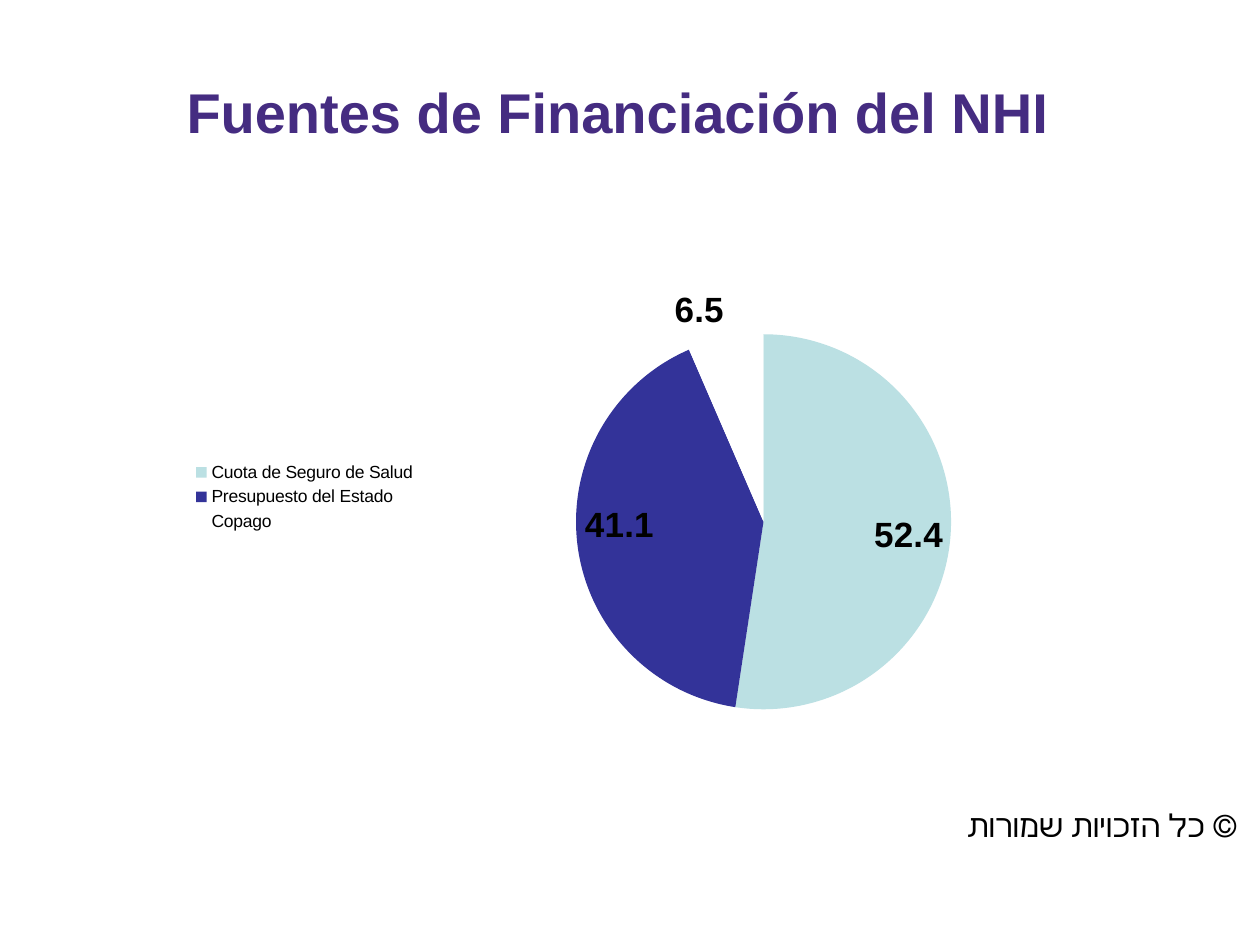
from lxml import etree
from pptx import Presentation
from pptx.chart.data import CategoryChartData
from pptx.dml.color import RGBColor
from pptx.enum.chart import XL_CHART_TYPE, XL_LABEL_POSITION, XL_LEGEND_POSITION
from pptx.enum.text import MSO_ANCHOR, PP_ALIGN
from pptx.oxml.ns import qn
from pptx.util import Emu, Pt

PX_PER_INCH = 126
FONT = "Arial"
PURPLE = RGBColor(0x45, 0x2C, 0x81)
BLACK = RGBColor(0x00, 0x00, 0x00)
PALE_TEAL = RGBColor(0xBB, 0xE0, 0xE3)
INDIGO = RGBColor(0x33, 0x33, 0x99)
WHITE = RGBColor(0xFF, 0xFF, 0xFF)
CENTER, RIGHT = PP_ALIGN.CENTER, PP_ALIGN.RIGHT
MIDDLE, TOP = MSO_ANCHOR.MIDDLE, MSO_ANCHOR.TOP
PIE = XL_CHART_TYPE.PIE
LEGEND_LEFT = XL_LEGEND_POSITION.LEFT
INSIDE_END, OUTSIDE_END = XL_LABEL_POSITION.INSIDE_END, XL_LABEL_POSITION.OUTSIDE_END

SOURCES = [
    ("Cuota de Seguro de Salud", 52.4, PALE_TEAL, INSIDE_END),
    ("Presupuesto del Estado", 41.1, INDIGO, INSIDE_END),
    ("Copago", 6.5, WHITE, OUTSIDE_END),
]


def px(length):
    """Turn whole pixels into EMU."""
    return Emu(round(length * 914400 / PX_PER_INCH))


def style_font(font, size, color, bold=False):
    """Set the face, size, colour and weight of a font."""
    font.name = FONT
    font.size = Pt(size)
    font.bold = bold
    font.color.rgb = color


def fill_text(shape, text, align, anchor, size, color, bold=False):
    """Write one right-to-left paragraph into a shape."""
    frame = shape.text_frame
    frame.text = text
    frame.word_wrap = True
    frame.vertical_anchor = anchor
    paragraph = frame.paragraphs[0]
    paragraph.alignment = align
    paragraph._p.get_or_add_pPr().set("rtl", "1")
    style_font(paragraph.runs[0].font, size, color, bold)


def add_title(slide, box):
    """Place and format the title placeholder."""
    title = slide.shapes.title
    title.left, title.top, title.width, title.height = map(px, box)
    fill_text(title, "Fuentes de Financiación del NHI", CENTER, MIDDLE, 32, PURPLE, True)


def add_copyright(slide, box):
    """Add the copyright line."""
    line = slide.shapes.add_textbox(*map(px, box))
    fill_text(line, "© כל הזכויות שמורות", RIGHT, TOP, 18, BLACK)


def set_plot_layout(chart, fractions):
    """Fix the inner plot area as fractions of the chart."""
    plot_area = chart._chartSpace.find(".//" + qn("c:plotArea"))
    for layout in plot_area.findall(qn("c:layout")):
        plot_area.remove(layout)
    layout = etree.Element(qn("c:layout"))
    manual = etree.SubElement(layout, qn("c:manualLayout"))
    settings = [("layoutTarget", "inner"), ("xMode", "edge"), ("yMode", "edge")]
    for tag, value in settings + list(zip("xywh", fractions)):
        etree.SubElement(manual, qn("c:" + tag)).set("val", str(value))
    plot_area.insert(0, layout)


def add_funding_pie(slide, box):
    """Add the pie of funding sources with its legend and value labels."""
    data = CategoryChartData(number_format="0.0")
    data.categories = [name for name, *_ in SOURCES]
    data.add_series("Series 1", [value for _, value, *_ in SOURCES])
    chart = slide.shapes.add_chart(PIE, *map(px, box), data).chart
    chart.has_title = False
    style_font(chart.font, 10, BLACK)
    chart.has_legend = True
    chart.legend.position = LEGEND_LEFT
    chart.legend.include_in_layout = False
    style_font(chart.legend.font, 10, BLACK)
    set_plot_layout(chart, (0.43, 0.14, 0.41, 0.83))

    plot = chart.plots[0]
    plot.vary_by_categories = True
    for index, (_, _, color, position) in enumerate(SOURCES):
        point = plot.series[0].points[index]
        point.format.fill.solid()
        point.format.fill.fore_color.rgb = color
        point.format.line.fill.background()
        style_font(point.data_label.font, 20, BLACK, True)
        point.data_label.position = position


def main():
    """Build and save the presentation."""
    presentation = Presentation()
    presentation.slide_width, presentation.slide_height = px(1260), px(945)
    slide = presentation.slides.add_slide(presentation.slide_layouts[5])
    add_title(slide, (39, 78, 1158, 67))
    add_copyright(slide, (850, 800, 400, 29))
    add_funding_pie(slide, (180, 271, 919, 452))
    presentation.save("out.pptx")


if __name__ == "__main__":
    main()
